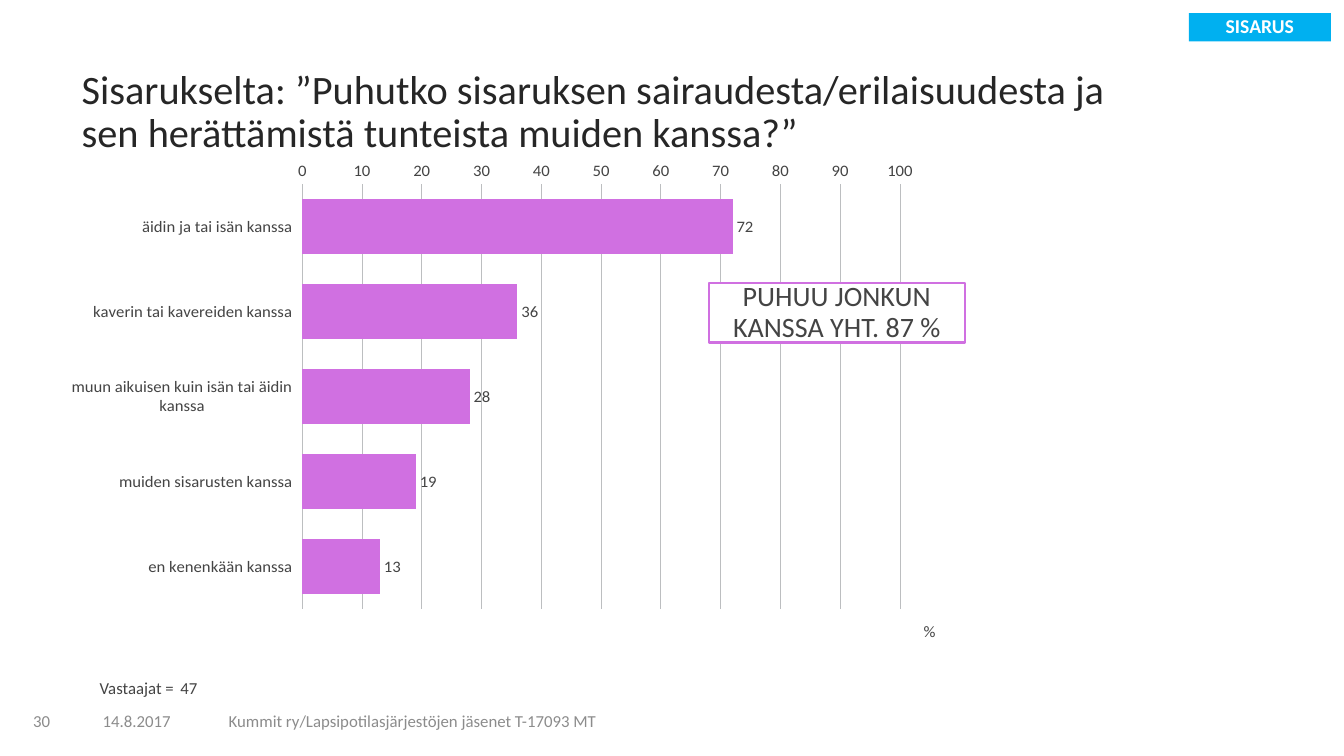
"""Build the sibling survey slide with its bar chart and callout."""
from pptx import Presentation
from pptx.chart.data import CategoryChartData
from pptx.dml.color import RGBColor
from pptx.enum.chart import (XL_AXIS_CROSSES, XL_CHART_TYPE, XL_LABEL_POSITION,
                             XL_TICK_LABEL_POSITION, XL_TICK_MARK)
from pptx.enum.shapes import MSO_SHAPE
from pptx.enum.text import MSO_ANCHOR, MSO_AUTO_SIZE, PP_ALIGN
from pptx.oxml import parse_xml
from pptx.oxml.ns import nsdecls
from pptx.util import Inches, Pt

TITLE = ("Sisarukselta: ”Puhutko sisaruksen sairaudesta/erilaisuudesta ja \v"
         "sen herättämistä tunteista muiden kanssa?”")
ANSWERS = {
    "äidin ja tai isän kanssa": 72,
    "kaverin tai kavereiden kanssa": 36,
    "muun aikuisen kuin isän tai äidin kanssa": 28,
    "muiden sisarusten kanssa": 19,
    "en kenenkään kanssa": 13,
}
FOOTER = [
    ("30", (0.23, 6.95, 0.44, 0.4)),
    ("14.8.2017", (0.92, 6.95, 1.01, 0.4)),
    ("Kummit ry/Lapsipotilasjärjestöjen jäsenet T-17093 MT", (2.17, 6.95, 4.56, 0.4)),
]
RESPONDENTS = [
    ("Vastaajat =", (0.89, 6.7, 1.82, 0.28)),
    ("47", (1.69, 6.7, 1.82, 0.28)),
]
TAG = ("SISARUS", (11.79, 0.13, 1.41, 0.28))
CALLOUT = ("PUHUU JONKUN KANSSA YHT. 87 %", (7.03, 2.81, 2.54, 0.59))
TITLE_BOX = (0.71, 0.64, 12.07, 0.89)
CHART_BOX = (0.71, 1.6, 8.6, 4.81)
PLOT = {"x": 0.262, "y": 0.012, "w": 0.694, "h": 0.92}
UNIT = {"x": 0.98, "y": 0.95}


class Theme:
    """Colours, font and type sizes of the slide."""
    font = "Calibri"
    title, text, muted = (RGBColor.from_string(c) for c in ("262626", "444444", "8C8C8C"))
    white, blue, violet, grid = (RGBColor.from_string(c) for c in ("FFFFFF", "00B0F0", "D070E1", "BCBEC0"))
    title_size, callout_size, tag_size, small = Pt(28.8), Pt(20), Pt(14), Pt(12)


def box(rect):
    """Convert a rectangle in inches to lengths."""
    return [Inches(v) for v in rect]


def set_font(font, size, color, bold=False):
    """Apply the slide's typeface to a font."""
    font.name, font.size, font.bold = Theme.font, size, bold
    font.color.rgb = color


def write(shape, text, size, color, anchor=MSO_ANCHOR.TOP, align=PP_ALIGN.LEFT,
          spacing=0.9, bold=False):
    """Fill a shape with one formatted paragraph."""
    tf = shape.text_frame
    tf.text = text
    tf.word_wrap = True
    tf.auto_size = MSO_AUTO_SIZE.NONE
    tf.vertical_anchor = anchor
    p = tf.paragraphs[0]
    p.alignment, p.line_spacing = align, spacing
    for r in p.runs:
        set_font(r.font, size, color, bold)


def add_label(s, item, **style):
    """Add a text box in the small size."""
    text, rect = item
    write(s.shapes.add_textbox(*box(rect)), text, Theme.small, **style)


def add_rect(s, item, fill, line, **style):
    """Add a filled rectangle with centred text."""
    text, rect = item
    sp = s.shapes.add_shape(MSO_SHAPE.RECTANGLE, *box(rect))
    sp.shadow.inherit = False
    sp.fill.solid()
    sp.fill.fore_color.rgb = fill
    if line is None:
        sp.line.fill.background()
    else:
        sp.line.color.rgb, sp.line.width = line, Pt(1.75)
    write(sp, text, anchor=MSO_ANCHOR.MIDDLE, align=PP_ALIGN.CENTER, **style)


def layout_xml(place, inner=False):
    """Return a manual chart layout element."""
    target = '<c:layoutTarget val="inner"/>' if inner else ""
    modes = "".join(f'<c:{k}Mode val="edge"/>' for k in "xy")
    values = "".join(f'<c:{k} val="{v}"/>' for k, v in place.items())
    return parse_xml(f'<c:layout {nsdecls("c")}><c:manualLayout>{target}{modes}{values}'
                     '</c:manualLayout></c:layout>')


def place_part(element, layout, index):
    """Replace the layout of a chart part."""
    for old in element.findall(layout.tag):
        element.remove(old)
    element.insert(index, layout)


def add_bars(s):
    """Add the bar chart of answers."""
    data = CategoryChartData()
    data.categories = list(ANSWERS)
    data.add_series("Series 1", list(ANSWERS.values()))
    chart = s.shapes.add_chart(XL_CHART_TYPE.BAR_CLUSTERED, *box(CHART_BOX), data).chart
    chart.has_legend = chart.has_title = False
    set_font(chart.font, Theme.small, Theme.text)

    cat, val = chart.category_axis, chart.value_axis
    for axis in (cat, val):
        axis.major_tick_mark = axis.minor_tick_mark = XL_TICK_MARK.NONE
        axis.format.line.fill.background()
        set_font(axis.tick_labels.font, Theme.small, Theme.text)
    cat.reverse_order = True
    cat.tick_label_position = XL_TICK_LABEL_POSITION.LOW
    cat.crosses = XL_AXIS_CROSSES.MAXIMUM
    val.minimum_scale, val.maximum_scale, val.major_unit = 0, 100, 10
    val.major_gridlines.format.line.color.rgb = Theme.grid
    val.major_gridlines.format.line.width = Pt(0.5)
    tf = val.axis_title.text_frame
    tf.text = "%"
    set_font(tf.paragraphs[0].runs[0].font, Theme.small, Theme.text)

    plot = chart.plots[0]
    plot.gap_width, plot.vary_by_categories = 55, False
    bars = plot.series[0]
    bars.format.fill.solid()
    bars.format.fill.fore_color.rgb = Theme.violet
    labels = bars.data_labels
    labels.show_value, labels.position = True, XL_LABEL_POSITION.OUTSIDE_END
    labels.number_format, labels.number_format_is_linked = "#,##0", False
    set_font(labels.font, Theme.small, Theme.text)

    place_part(val.axis_title._element, layout_xml(UNIT), 1)
    place_part(chart._chartSpace.chart.plotArea, layout_xml(PLOT, inner=True), 0)


def main():
    """Assemble and save the slide."""
    prs = Presentation()
    prs.slide_width, prs.slide_height = Inches(13.33), Inches(7.5)
    s = prs.slides.add_slide(prs.slide_layouts[5])
    title = s.shapes.title
    title.left, title.top, title.width, title.height = box(TITLE_BOX)
    write(title, TITLE, Theme.title_size, Theme.title)
    add_bars(s)
    for item in FOOTER:
        add_label(s, item, color=Theme.muted, anchor=MSO_ANCHOR.MIDDLE, spacing=1.0)
    for item in RESPONDENTS:
        add_label(s, item, color=Theme.text)
    add_rect(s, TAG, Theme.blue, None, size=Theme.tag_size, color=Theme.white, bold=True)
    add_rect(s, CALLOUT, Theme.white, Theme.violet, size=Theme.callout_size, color=Theme.text)
    prs.save("out.pptx")


if __name__ == "__main__":
    main()
